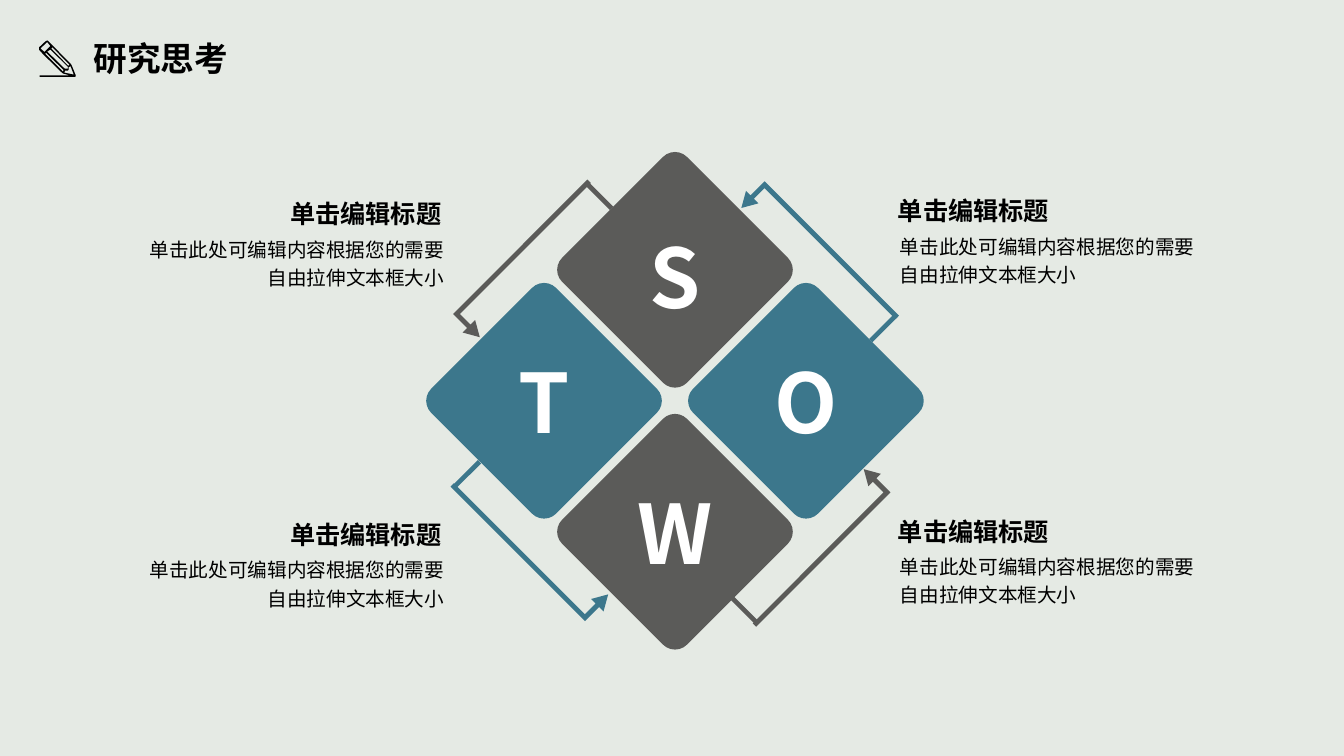
import pptx
import pptx.dml.color
import pptx.enum.shapes
import pptx.enum.text
import pptx.oxml
import pptx.oxml.ns
import pptx.util
from pptx.util import Cm

SHAPE = pptx.enum.shapes.MSO_SHAPE
ALIGN = pptx.enum.text.PP_ALIGN
FONT = "Noto Sans CJK SC"
BACKDROP, TEAL, GRAY, BLACK, WHITE = "E5EAE4", "3C778C", "5B5B59", "000000", "FFFFFF"

CENTER_X, CENTER_Y, DIAMOND_OFFSET = 17.01, 10.1, 3.3
# letter, column step, row step, colour, letter drop
DIAMONDS = [
    ("S", 0, -1, GRAY, 0.15),
    ("O", 1, 0, TEAL, 0),
    ("T", -1, 0, TEAL, 0),
    ("W", 0, 1, GRAY, 0),
]
# arrow centre, tail centre, rotation, flip, colour
ARROWS = [
    ((13.42, 13.7), (11.77, 11.95), 315, "flipV", TEAL),
    ((13.37, 6.59), (15.1, 4.94), 45, "flipV", GRAY),
    ((20.49, 13.73), (18.76, 15.38), 45, "flipH", GRAY),
    ((20.59, 6.52), (22.26, 8.27), 315, "flipH", TEAL),
]
# title left, body left, top of first row, body alignment
NOTE_COLUMNS = [(7.06, 3.35, 4.88, ALIGN.RIGHT), (22.38, 22.68, 4.8, ALIGN.LEFT)]
NOTE_ROW_PITCH = 8.08
# Outline and cut-outs of the pencil, in hundredths of a centimetre
PENCIL_CONTOURS = [
    [(190, 194), (191, 190), (180, 163), (132, 114), (122, 104), (119, 102), (115, 104),
     (99, 119), (99, 126), (109, 137), (158, 185), (176, 190), (100, 190), (100, 194)],
    [(186, 188), (162, 183), (164, 178), (171, 178), (173, 176), (173, 169), (178, 167)],
    [(132, 119), (175, 163), (172, 166), (129, 122)],
    [(127, 125), (171, 168), (171, 173), (163, 173), (119, 130)],
    [(102, 122), (118, 107), (120, 107), (127, 116), (112, 131), (103, 123)],
    [(116, 133), (160, 176), (159, 181), (114, 136)],
]


def rgb(color):
    return pptx.dml.color.RGBColor.from_string(color)


def paint(shape, color):
    shape.fill.solid()
    shape.fill.fore_color.rgb = rgb(color)
    shape.line.fill.background()
    shape.shadow.inherit = False


def add_block(slide, kind, center, width, height, color, rotation=0, adjustments=()):
    """Add a borderless preset shape around its centre."""
    x, y = center
    block = slide.shapes.add_shape(
        kind, Cm(x - width / 2), Cm(y - height / 2), Cm(width), Cm(height))
    paint(block, color)
    block.rotation = rotation
    for index, value in enumerate(adjustments):
        block.adjustments[index] = value
    return block


def add_text(slide, text, left, top, width, height, size, color=BLACK,
             bold=True, align=ALIGN.LEFT, inset=True):
    box = slide.shapes.add_textbox(Cm(left), Cm(top), Cm(width), Cm(height))
    frame = box.text_frame
    frame.word_wrap = True
    if not inset:
        frame.margin_left = frame.margin_right = frame.margin_top = frame.margin_bottom = 0
    paragraph = frame.paragraphs[0]
    paragraph.text = text
    paragraph.alignment = align
    font = paragraph.font
    font.name, font.size, font.bold = FONT, pptx.util.Pt(size), bold
    font.color.rgb = rgb(color)
    defaults = paragraph._p.pPr.find(pptx.oxml.ns.qn("a:defRPr"))
    east_asian = pptx.oxml.parse_xml(f'<a:ea {pptx.oxml.ns.nsdecls("a")} typeface="{FONT}"/>')
    defaults.append(east_asian)
    return frame


def add_arrow(slide, center, tail_center, rotation, flip, color):
    """Add a bent arrow and the short bar that ties its tail to a diamond."""
    arrow = add_block(slide, SHAPE.BENT_ARROW, center, 0.89, 4.95, color,
                      rotation, (0.137, 0.25, 0.436, 0))
    arrow._element.spPr.xfrm.set(flip, "1")
    add_block(slide, SHAPE.RECTANGLE, tail_center, 0.89, 0.12, color, rotation)


def add_diamond(slide, letter, column, row, color, letter_drop):
    x = CENTER_X + column * DIAMOND_OFFSET
    y = CENTER_Y + row * DIAMOND_OFFSET
    add_block(slide, SHAPE.ROUNDED_RECTANGLE, (x, y), 4.45, 4.45, color, 45, (0.096,))
    width, height = 2, 2.51
    frame = add_text(slide, letter, x - width / 2, y - height / 2 + letter_drop, width, height,
                     58.6, WHITE, align=ALIGN.CENTER, inset=False)
    frame.word_wrap = False
    frame.vertical_anchor = pptx.enum.text.MSO_ANCHOR.MIDDLE


def add_note(slide, title_left, body_left, top, align):
    add_text(slide, "单击编辑标题", title_left, top, 4.67, 1.02, 18)
    body = add_text(slide, "单击此处可编辑内容根据您的需要自由拉伸文本框大小",
                    body_left, top + 0.99, 7.85, 1.4, 14, bold=False, align=align, inset=False)
    body.paragraphs[0].line_spacing = 1.2
    body.paragraphs[0].space_after = pptx.util.Pt(6)


def add_pencil(slide):
    outline, *cutouts = PENCIL_CONTOURS
    builder = slide.shapes.build_freeform(*outline[0], scale=Cm(0.01))
    builder.add_line_segments(outline[1:])
    for cutout in cutouts:
        builder.move_to(*cutout[0])
        builder.add_line_segments(cutout[1:])
    paint(builder.convert_to_shape(), BLACK)


def main():
    deck = pptx.Presentation()
    deck.slide_width, deck.slide_height = Cm(33.87), Cm(19.05)
    slide = deck.slides.add_slide(deck.slide_layouts[6])
    add_block(slide, SHAPE.RECTANGLE, (33.87 / 2, 19.05 / 2), 33.87, 19.05, BACKDROP)
    for arrow in ARROWS:
        add_arrow(slide, *arrow)
    for diamond in DIAMONDS:
        add_diamond(slide, *diamond)
    for row in range(2):
        for title_left, body_left, top, align in NOTE_COLUMNS:
            add_note(slide, title_left, body_left, top + row * NOTE_ROW_PITCH, align)
    add_text(slide, "研究思考", 2.11, 0.84, 6.43, 1.27, 24)
    add_pencil(slide)
    deck.save("out.pptx")


if __name__ == "__main__":
    main()
